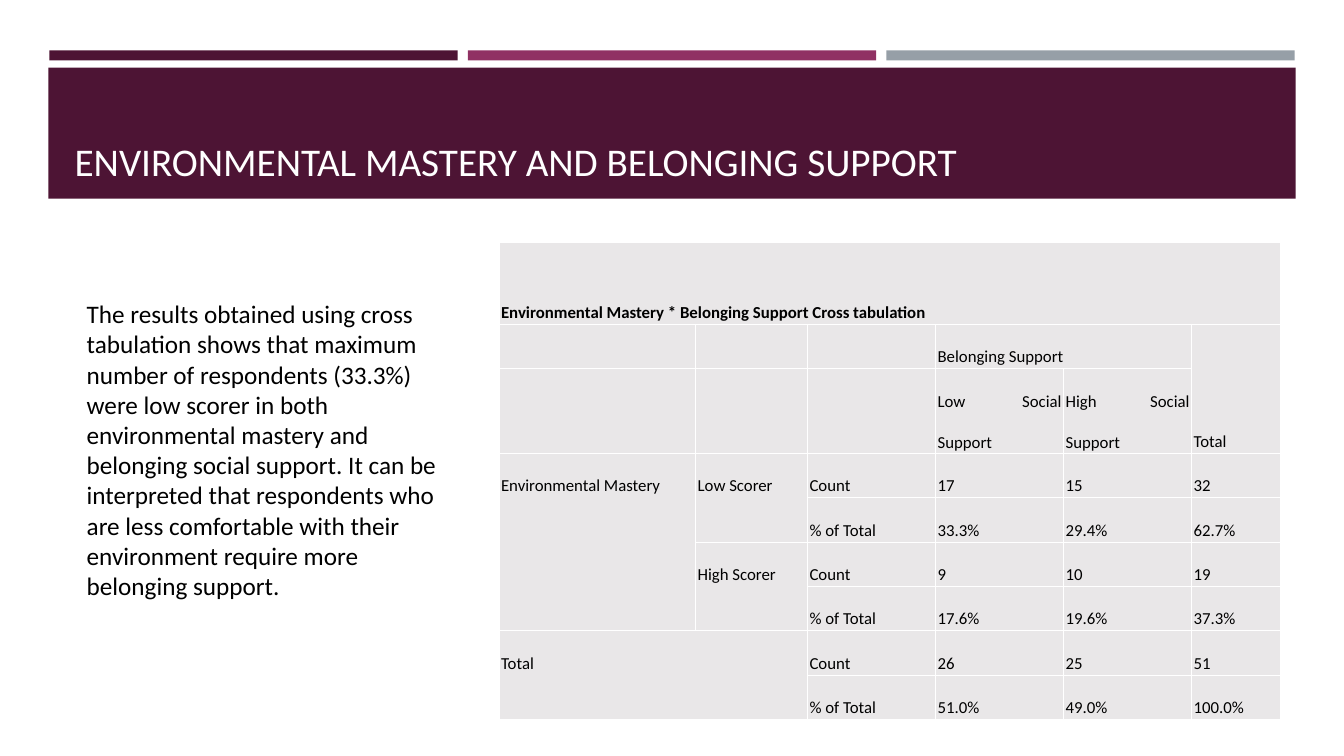
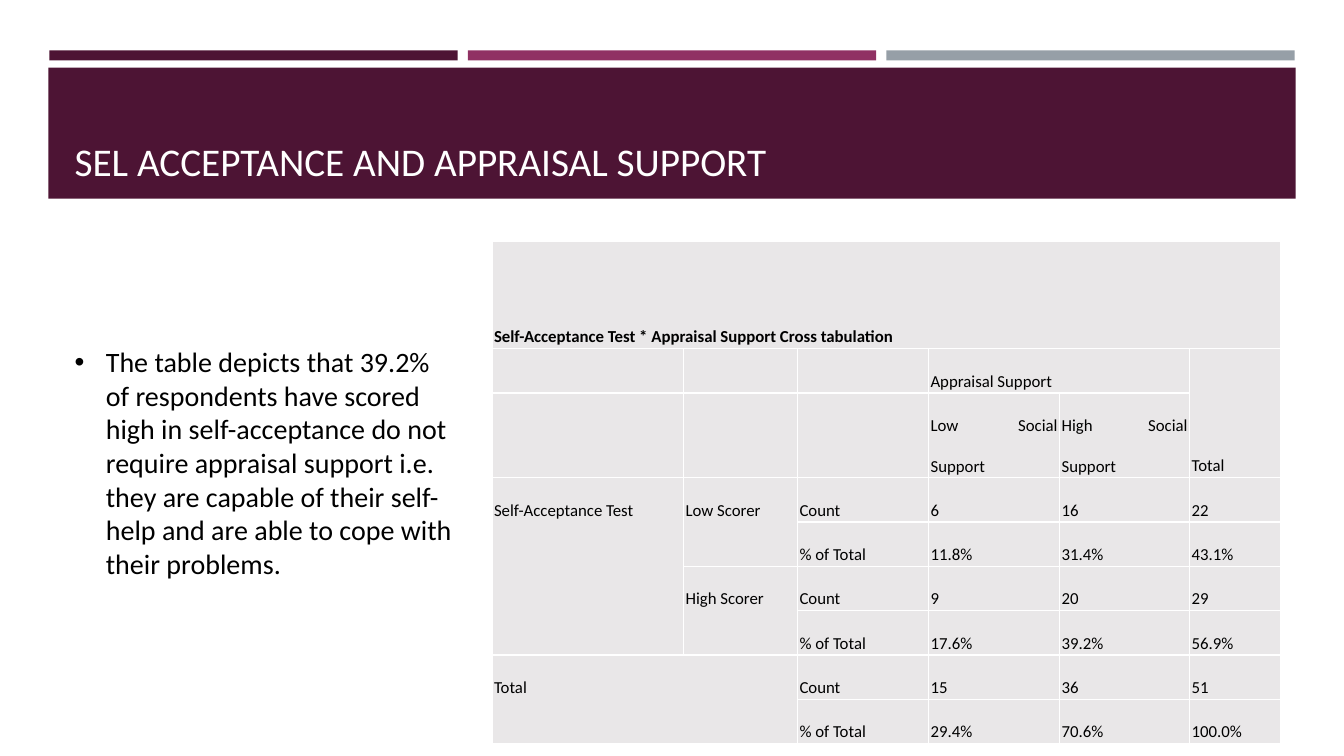
from dataclasses import dataclass
from itertools import product

from lxml.etree import SubElement
from pptx import Presentation
from pptx.dml.color import RGBColor
from pptx.enum.shapes import MSO_SHAPE
from pptx.enum.text import MSO_ANCHOR, MSO_AUTO_SIZE, PP_ALIGN
from pptx.oxml import parse_xml
from pptx.oxml.ns import nsdecls, qn
from pptx.util import Emu, Pt

EMU_PER_PX = 9144
FONT = "Calibri"
PLUM, BERRY, GREY = "4D1434", "903163", "969FA7"
WHITE, BLACK, CELL_FILL = "FFFFFF", "000000", "E9E7E8"
TOP, MIDDLE, BOTTOM = MSO_ANCHOR.TOP, MSO_ANCHOR.MIDDLE, MSO_ANCHOR.BOTTOM


@dataclass(frozen=True)
class Box:
    x: int
    y: int
    w: int
    h: int


@dataclass(frozen=True)
class Band:
    box: Box
    color: str


@dataclass(frozen=True)
class Entry:
    row: int
    col: int
    text: str
    anchor: MSO_ANCHOR = TOP
    rows: int = 1
    cols: int = 1
    bold: bool = False


@dataclass(frozen=True)
class Crosstab:
    box: Box
    widths: list[int]
    heights: list[int]
    variable: str
    support: str
    values: list[str]


@dataclass(frozen=True)
class Finding:
    title: str
    text: str
    text_box: Box
    size: int
    bulleted: bool
    table: Crosstab


BANDS = [Band(Box(49 + i * 415, 50, 405, 10), c) for i, c in enumerate((PLUM, BERRY, GREY))]
BANDS.append(Band(Box(48, 67, 1237, 130), PLUM))
TITLE_BOX = Box(64, 77, 1206, 111)
BULLET_INDENT = 31

FINDINGS = [
    Finding(
        "ENVIRONMENTAL MASTERY AND BELONGING SUPPORT",
        "The results obtained using cross tabulation shows that maximum number of "
        "respondents (33.3%) were low scorer in both environmental mastery and "
        "belonging social support. It can be interpreted that respondents who are "
        "less comfortable with their environment require more belonging support.",
        Box(76, 291, 381, 343), 18, False,
        Crosstab(
            Box(495, 240, 775, 468),
            [195, 111, 127, 127, 127, 88],
            [82, 43, 82] + [43] * 6,
            "Environmental Mastery", "Belonging Support",
            ["17 15 32", "33.3% 29.4% 62.7%", "9 10 19",
             "17.6% 19.6% 37.3%", "26 25 51", "51.0% 49.0% 100.0%"],
        ),
    ),
    Finding(
        "SEL ACCEPTANCE AND APPRAISAL SUPPORT",
        "The table depicts that 39.2% of respondents have scored high in "
        "self-acceptance do not require appraisal support i.e. they are capable of "
        "their self-help and are able to cope with their problems.",
        Box(64, 337, 400, 276), 20, True,
        Crosstab(
            Box(488, 239, 782, 493),
            [190, 113, 130, 130, 129, 90],
            [107, 38, 73] + [38] * 6,
            "Self-Acceptance Test", "Appraisal Support",
            ["6 16 22", "11.8% 31.4% 43.1%", "9 20 29",
             "17.6% 39.2% 56.9%", "15 36 51", "29.4% 70.6% 100.0%"],
        ),
    ),
]


def px(n: int) -> Emu:
    return Emu(n * EMU_PER_PX)


def color(value: str) -> RGBColor:
    return RGBColor.from_string(value)


def place(sp, box: Box) -> None:
    sp.left, sp.top, sp.width, sp.height = px(box.x), px(box.y), px(box.w), px(box.h)


def style(p, size: int, text_color: str, align=PP_ALIGN.LEFT, bold: bool = False) -> None:
    p.alignment = align
    p.space_before = Pt(0)
    p.font.name = FONT
    p.font.size = Pt(size)
    p.font.bold = bold
    p.font.color.rgb = color(text_color)


def add_band(s, index: int, band: Band) -> None:
    b = band.box
    sp = s.shapes.add_shape(MSO_SHAPE.RECTANGLE, px(b.x), px(b.y), px(b.w), px(b.h))
    sp.shadow.inherit = False
    sp.fill.solid()
    sp.fill.fore_color.rgb = color(band.color)
    sp.line.fill.background()
    s.shapes._spTree.insert(2 + index, sp._element)


def set_title(s, text: str) -> None:
    sp = s.shapes.title
    place(sp, TITLE_BOX)
    tf = sp.text_frame
    tf.text = text
    tf.auto_size = MSO_AUTO_SIZE.NONE
    tf.vertical_anchor = BOTTOM
    style(tf.paragraphs[0], 28, WHITE)


def set_body(s, finding: Finding) -> None:
    sp = s.placeholders[1]
    place(sp, finding.text_box)
    tf = sp.text_frame
    tf.text = finding.text
    tf.word_wrap = True
    tf.auto_size = MSO_AUTO_SIZE.SHAPE_TO_FIT_TEXT
    tf.vertical_anchor = TOP
    p = tf.paragraphs[0]
    style(p, finding.size, BLACK)
    pPr = p._p.get_or_add_pPr()
    indent = px(BULLET_INDENT) if finding.bulleted else 0
    pPr.set("marL", str(int(indent)))
    pPr.set("indent", str(-int(indent)))
    if finding.bulleted:
        bullet = f'<a:buChar {nsdecls("a")} char="•"/>'
    else:
        bullet = f'<a:buNone {nsdecls("a")}/>'
    pPr.find(qn("a:defRPr")).addprevious(parse_xml(bullet))


def format_cell(cell) -> None:
    cell.margin_left = cell.margin_right = cell.margin_top = cell.margin_bottom = px(2)
    tcPr = cell._tc.get_or_add_tcPr()
    for side in ("lnL", "lnR", "lnT", "lnB"):
        ln = SubElement(tcPr, qn(f"a:{side}"), w=str(int(Pt(1))))
        fill = SubElement(ln, qn("a:solidFill"))
        SubElement(fill, qn("a:srgbClr"), val=WHITE)
    cell.fill.solid()
    cell.fill.fore_color.rgb = color(CELL_FILL)
    style(cell.text_frame.paragraphs[0], 12, BLACK)


def crosstab_entries(tab: Crosstab) -> list[Entry]:
    entries = [
        Entry(0, 0, f"{tab.variable} * {tab.support} Cross tabulation", BOTTOM, cols=6, bold=True),
        Entry(1, 3, tab.support, BOTTOM, cols=2),
        Entry(1, 5, "Total", BOTTOM, rows=2),
        Entry(2, 3, "Low Social Support", BOTTOM),
        Entry(2, 4, "High Social Support", BOTTOM),
        Entry(3, 0, tab.variable, rows=4),
        Entry(3, 1, "Low Scorer", rows=2),
        Entry(5, 1, "High Scorer", rows=2),
        Entry(7, 0, "Total", rows=2, cols=2),
    ]
    for i, line in enumerate(tab.values):
        entries.append(Entry(3 + i, 2, ("Count", "% of Total")[i % 2]))
        entries += [Entry(3 + i, 3 + j, v, MIDDLE) for j, v in enumerate(line.split())]
    return entries


def add_crosstab(s, tab: Crosstab) -> None:
    b = tab.box
    n_rows, n_cols = len(tab.heights), len(tab.widths)
    table = s.shapes.add_table(n_rows, n_cols, px(b.x), px(b.y), px(b.w), px(b.h)).table
    table.first_row = table.horz_banding = False
    for column, width in zip(table.columns, tab.widths):
        column.width = px(width)
    for row, height in zip(table.rows, tab.heights):
        row.height = px(height)
    for r, c in product(range(n_rows), range(n_cols)):
        format_cell(table.cell(r, c))
    for e in crosstab_entries(tab):
        cell = table.cell(e.row, e.col)
        if e.rows * e.cols > 1:
            cell.merge(table.cell(e.row + e.rows - 1, e.col + e.cols - 1))
        cell.text = e.text
        cell.vertical_anchor = e.anchor
        p = cell.text_frame.paragraphs[0]
        style(p, 12, BLACK, PP_ALIGN.JUSTIFY, e.bold)
        p.line_spacing = 2.0


def add_finding(prs, finding: Finding) -> None:
    s = prs.slides.add_slide(prs.slide_layouts[1])
    for index, band in enumerate(BANDS):
        add_band(s, index, band)
    set_title(s, finding.title)
    add_crosstab(s, finding.table)
    set_body(s, finding)


def main() -> None:
    prs = Presentation()
    prs.slide_width, prs.slide_height = px(1333), px(750)
    for finding in FINDINGS:
        add_finding(prs, finding)
    prs.save("out.pptx")


if __name__ == "__main__":
    main()
